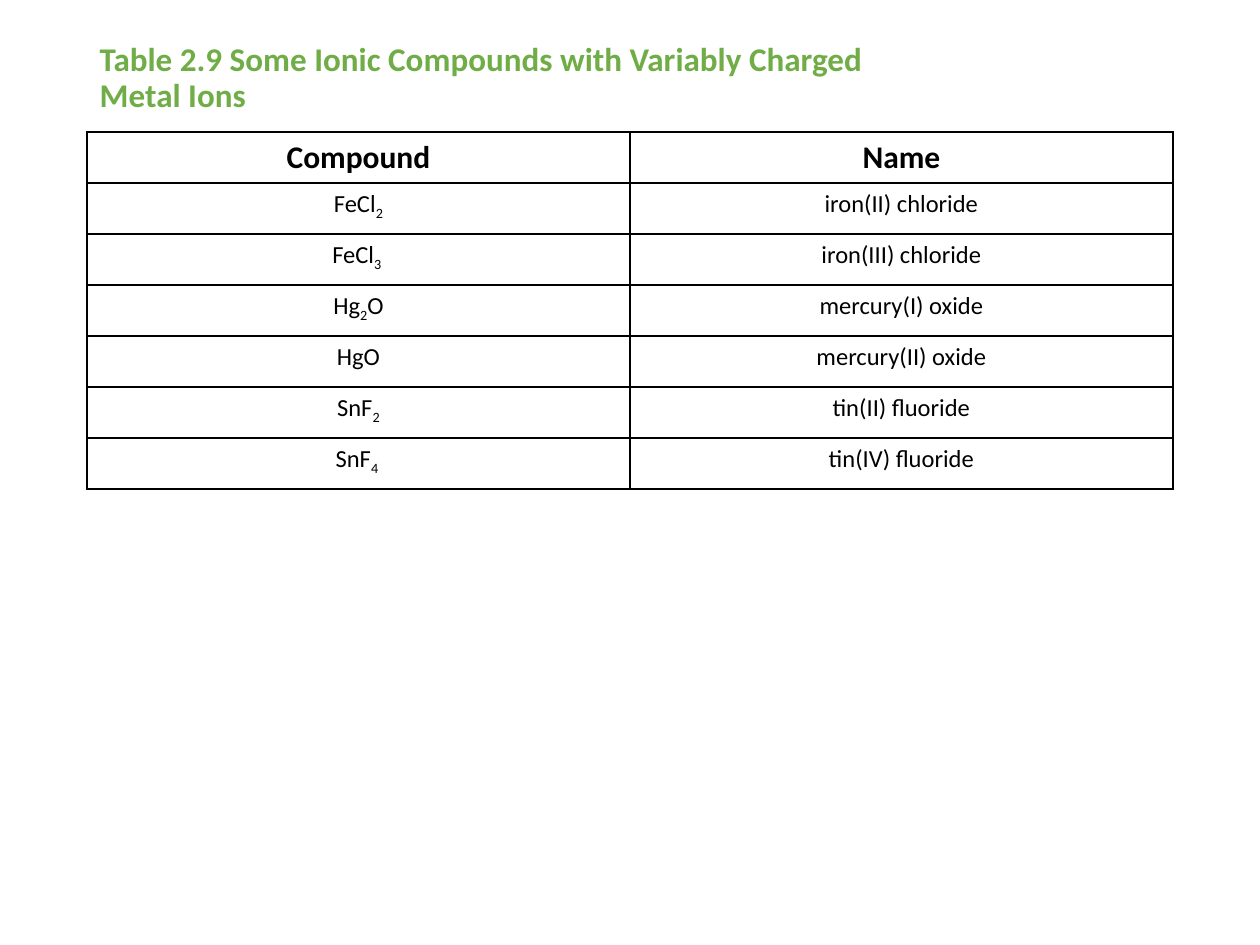
from itertools import groupby

from lxml import etree
from pptx import Presentation
from pptx import util as u
from pptx.dml.color import RGBColor
from pptx.enum import text
from pptx.oxml.ns import qn

TITLE = "Table 2.9 Some Ionic Compounds with Variably Charged \vMetal Ions"
HEADINGS = ("Compound", "Name")
COMPOUNDS = [
    ("FeCl2", "iron(II) chloride"),
    ("FeCl3 ", "iron(III) chloride"),
    ("Hg2O", "mercury(I) oxide"),
    ("HgO", "mercury(II) oxide"),
    ("SnF2", "tin(II) fluoride"),
    ("SnF4 ", "tin(IV) fluoride"),
]

PX = 914400 // 126
PAGE_WIDTH, PAGE_HEIGHT = 1260, 945
LEFT, COLUMN_WIDTH, ROW_HEIGHT = 87, 543, 51
TITLE_TOP, TITLE_HEIGHT, TABLE_TOP = 50, 58, 132
BLACK, GREEN = "000000", "70AD47"

TITLE_FONT = {"name": "Calibri", "size": u.Pt(18.9), "bold": True}
HEADING_FONT = {"name": "Calibri", "size": u.Pt(18), "bold": True}
BODY_FONT = {"name": "Calibri", "size": u.Pt(14), "bold": False}


def set_font(font, values, colour):
    for name, value in values.items():
        setattr(font, name, value)
    font.color.rgb = RGBColor.from_string(colour)


def add_borders(cell):
    properties = cell._tc.get_or_add_tcPr()
    for side in ("lnL", "lnR", "lnT", "lnB"):
        line = etree.SubElement(properties, qn(f"a:{side}"), w=str(u.Pt(1)))
        fill = etree.SubElement(line, qn("a:solidFill"))
        etree.SubElement(fill, qn("a:srgbClr"), val=BLACK)


def formula_parts(formula):
    """Split a formula into (text, is_subscript) pairs."""
    return [("".join(part), not letters)
            for letters, part in groupby(formula, str.isalpha)]


def fill_cell(cell, parts, font):
    add_borders(cell)
    cell.fill.background()
    para = cell.text_frame.paragraphs[0]
    para.alignment = text.PP_ALIGN.CENTER
    for wording, subscript in parts:
        span = para.add_run()
        span.text = wording
        set_font(span.font, font, BLACK)
        if subscript:
            span.font._element.set("baseline", "-25000")


def add_title(page):
    title = page.shapes.title
    title.left, title.top = LEFT * PX, TITLE_TOP * PX
    title.width, title.height = 2 * COLUMN_WIDTH * PX, TITLE_HEIGHT * PX
    frame = title.text_frame
    frame.text = TITLE
    frame.word_wrap = True
    frame.auto_size = text.MSO_AUTO_SIZE.NONE
    frame.vertical_anchor = text.MSO_ANCHOR.MIDDLE
    para = frame.paragraphs[0]
    para.alignment = text.PP_ALIGN.LEFT
    para.line_spacing = 0.9
    for span in para.runs:
        set_font(span.font, TITLE_FONT, GREEN)


def add_compound_table(page):
    rows, columns = len(COMPOUNDS) + 1, len(HEADINGS)
    table = page.shapes.add_table(
        rows, columns, LEFT * PX, TABLE_TOP * PX,
        columns * COLUMN_WIDTH * PX, rows * ROW_HEIGHT * PX).table
    table.horz_banding = False
    for column, heading in enumerate(HEADINGS):
        fill_cell(table.cell(0, column), [(heading, False)], HEADING_FONT)
    for row, (formula, name) in enumerate(COMPOUNDS, 1):
        fill_cell(table.cell(row, 0), formula_parts(formula), BODY_FONT)
        fill_cell(table.cell(row, 1), [(name, False)], BODY_FONT)


def main():
    deck = Presentation()
    deck.slide_width, deck.slide_height = PAGE_WIDTH * PX, PAGE_HEIGHT * PX
    page = deck.slides.add_slide(deck.slide_layouts[5])
    add_title(page)
    add_compound_table(page)
    deck.save("out.pptx")


if __name__ == "__main__":
    main()
